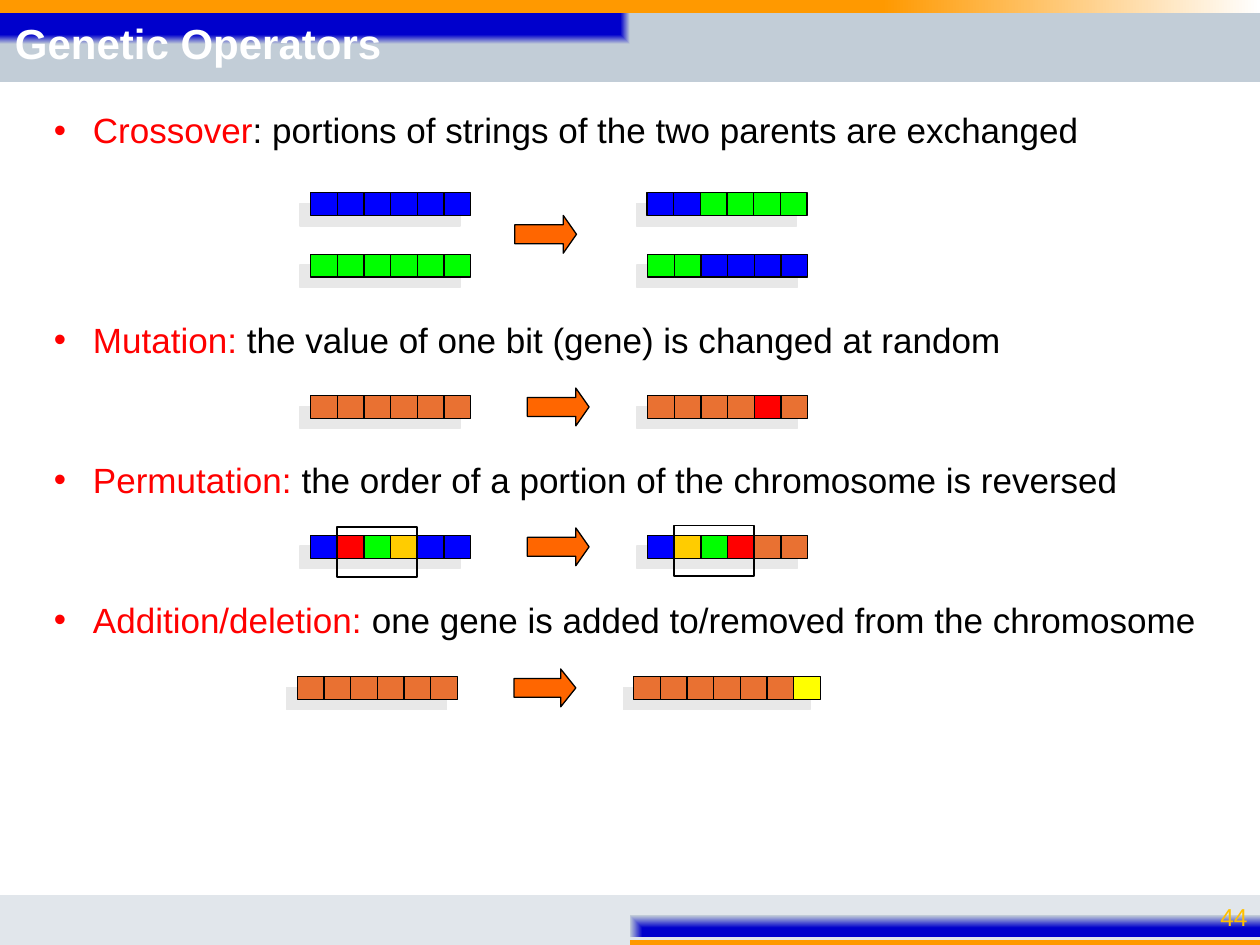
from lxml import etree
from pptx import Presentation
from pptx.dml.color import RGBColor
from pptx.enum.shapes import MSO_SHAPE
from pptx.enum.text import MSO_ANCHOR, PP_ALIGN
from pptx.oxml import parse_xml
from pptx.oxml.ns import nsdecls, qn
from pptx.util import Inches, Pt

RECT, ARROW = MSO_SHAPE.RECTANGLE, MSO_SHAPE.RIGHT_ARROW
MID, RIGHT, LEFT = MSO_ANCHOR.MIDDLE, PP_ALIGN.RIGHT, PP_ALIGN.LEFT
WIDE, HIGH = Inches(10), Inches(7.5)
FONT = "Arial"
CELL = 12.7 / 6
GENES = {"B": "0000FF", "G": "00FF00", "O": "E97132",
         "R": "FF0000", "Y": "FFCC00", "N": "FFFF00"}
START = (0, 0, 100, 100)
END = (100, 100, 0, 0)

BANDS = [
    ((0, 0.67, 100, 8), [(25, "0000CC"), (75, "0000CC"), (100, "C2CDD7")], START),
    ((0, 0, 100, 1.33), [(46, "FF9900"), (70, "FF9900"), (100, "FFFFFF"),
                         (100, "E1E6EB")], None),
    ((0, 98.93, 100, 1.07), [(50, "FF9900"), (93, "FF9900"), (100, "FFFFFF"),
                             (100, "E1E6EB")], END),
    ((0, 94.67, 100, 4.4), [(40, "0000CC"), (100, "C2CDD7"), (100, "E1E6EB")], END),
]
POINTS = [
    ("Crossover", ": portions of strings of the two parents are exchanged", 0),
    ("Mutation: ", "the value of one bit (gene) is changed at random", 98.2),
    ("Permutation: ", "the order of a portion of the chromosome is reversed", 58.4),
    ("Addition/deletion: ", "one gene is added to/removed from the chromosome", 58.4),
]
STEPS = [
    ([(24.65, 20.4, "BBBBBB"), (24.65, 26.93, "GGGGGG"),
      (51.35, 20.4, "BBGGGG"), (51.4, 26.93, "GGBBBB")], (40.85, 22.8), 0.35, []),
    ([(23.6, 71.6, "OOOOOO"), (50.3, 71.6, "OOOOOON")], (40.8, 70.8), 0.4, []),
    ([(24.65, 41.87, "OOOOOO"), (51.4, 41.87, "OOOORO")], (41.85, 41.07), 0.35, []),
    ([(24.65, 56.67, "BRGYBB"), (51.4, 56.67, "BYGROO")], (41.85, 55.87), 0.35,
     [(26.75, 55.73), (53.5, 55.6)]),
]


def color(code):
    return RGBColor.from_string(code)


def place(x, y, w, h):
    return [round(part * full / 100)
            for part, full in zip((x, y, w, h), (WIDE, HIGH, WIDE, HIGH))]


def add_shape(shapes, kind, area, fill=None, line=None, width=0.75):
    shape = shapes.add_shape(kind, *place(*area))
    shape.shadow.inherit = False
    if fill:
        shape.fill.solid()
        shape.fill.fore_color.rgb = color(fill)
    else:
        shape.fill.background()
    if line:
        shape.line.color.rgb = color(line)
        shape.line.width = Pt(width)
    else:
        shape.line.fill.background()
    return shape


def add_band(shapes, area, stops, focus):
    band = add_shape(shapes, RECT, area, stops[0][1])
    marks = "".join(f'<a:gs pos="{pos * 1000}"><a:srgbClr val="{code}"/></a:gs>'
                    for pos, code in stops)
    if focus:
        sides = " ".join(f'{side}="{share * 1000}"'
                         for side, share in zip("ltrb", focus))
        path = f'<a:path path="rect"><a:fillToRect {sides}/></a:path>'
    else:
        path = '<a:lin ang="0" scaled="1"/>'
    grad = parse_xml(f'<a:gradFill {nsdecls("a")} rotWithShape="1">'
                     f'<a:gsLst>{marks}</a:gsLst>{path}</a:gradFill>')
    props = band._element.spPr
    props.replace(props.find(qn("a:solidFill")), grad)


def add_shade(shape):
    effects = shape._element.spPr.find(qn("a:effectLst"))
    shade = etree.SubElement(effects, qn("a:outerShdw"), dist=str(Pt(8.5)),
                             dir="8100000", algn="ctr", rotWithShape="0")
    etree.SubElement(shade, qn("a:srgbClr"), val="E8E8E8")


def add_genes(shapes, x, y, codes):
    for col, code in reversed(list(enumerate(codes))):
        area = (x + col * CELL, y, CELL, 2.4)
        add_shade(add_shape(shapes, RECT, area, GENES[code], "000000"))


def add_step(slide, rows, spot, head, frames):
    shapes = slide.shapes.add_group_shape().shapes
    for row in rows:
        add_genes(shapes, *row)
    arrow = add_shape(shapes, ARROW, (*spot, 4.9, 4), "FF6600", "000000")
    arrow.adjustments[1] = head
    for x, y in frames:
        add_shape(shapes, RECT, (x, y, 3 * CELL, 5.33), None, "000000", 1)


def add_box(slide, area):
    frame = slide.shapes.add_textbox(*place(*area)).text_frame
    frame.word_wrap = True
    return frame


def style(run, size, code, bold=False):
    run.font.name = FONT
    run.font.size = Pt(size)
    run.font.bold = bold
    run.font.color.rgb = color(code)


def add_label(slide, area, text, size, code, bold=False, align=LEFT):
    frame = add_box(slide, area)
    frame.vertical_anchor = MID
    frame.text = text
    para = frame.paragraphs[0]
    para.alignment = align
    style(para.runs[0], size, code, bold)


def add_points(slide, area):
    frame = add_box(slide, area)
    for i, (term, rest, gap) in enumerate(POINTS):
        para = frame.add_paragraph() if i else frame.paragraphs[0]
        para.line_spacing = 0.9
        para.space_before = Pt(gap)
        props = para._p.get_or_add_pPr()
        props.set("marL", str(Inches(0.31)))
        props.set("indent", str(-Inches(0.31)))
        tint = etree.SubElement(props, qn("a:buClr"))
        etree.SubElement(tint, qn("a:srgbClr"), val="FF0000")
        etree.SubElement(props, qn("a:buFont"), typeface=FONT)
        etree.SubElement(props, qn("a:buChar"), char="•")
        for text, code in ((term, "FF0000"), (rest, "000000")):
            run = para.add_run()
            run.text = text
            style(run, 20, code)


def main():
    deck = Presentation()
    deck.slide_width, deck.slide_height = WIDE, HIGH
    slide = deck.slides.add_slide(deck.slide_layouts[6])
    for band in BANDS:
        add_band(slide.shapes, *band)
    add_label(slide, (92.4, 95.07, 7.6, 3.87), "44", 14, "FFC000", align=RIGHT)
    add_points(slide, (3.3, 11.33, 93.3, 82))
    add_label(slide, (0.2, 1.47, 99.8, 6.13), "Genetic Operators", 24, "FFFFFF", True)
    for step in STEPS:
        add_step(slide, *step)
    deck.save("out.pptx")


if __name__ == "__main__":
    main()
